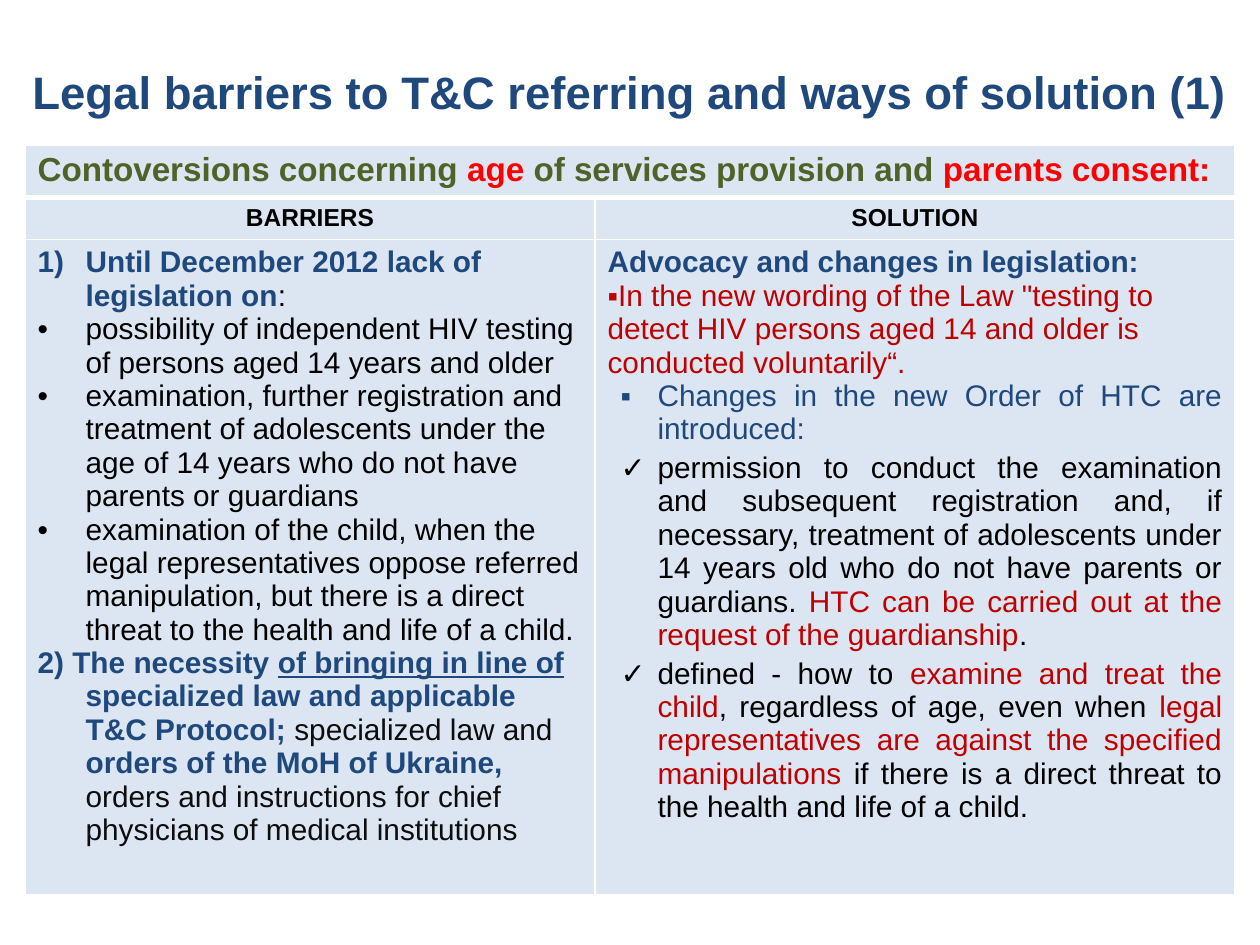
from lxml import etree
from pptx import Presentation
from pptx.dml.color import RGBColor
from pptx.enum.text import MSO_ANCHOR, PP_ALIGN
from pptx.oxml.ns import qn
from pptx.util import Pt

PX = 914400 // 126
LEFT, CENTER, JUSTIFY = PP_ALIGN.LEFT, PP_ALIGN.CENTER, PP_ALIGN.JUSTIFY
MIDDLE = MSO_ANCHOR.MIDDLE
NAVY, OLIVE, RED, CRIMSON = "1F497D", "4F6228", "FF0000", "C00000"
BLACK, SOFT_BLACK, WHITE, PALE = "000000", "0D0D0D", "FFFFFF", "DCE6F2"

COLUMNS = (570, 640)
ROWS = (48, 41, 646)
HANGING = {"margin": 48, "indent": -48}
NESTED = {"margin": 50, "indent": -37, "align": JUSTIFY, "after": 3}
BOLD = {"bold": True}
UNDERLINED = {"bold": True, "underline": True}

# A paragraph is (layout, spans); a span is (text, colour, font values).
TITLE = [({"align": CENTER, "before": 5},
          [("Legal barriers to T&C referring and ways of solution (1)", NAVY, BOLD)])]
TOPIC = [({}, [
    ("Contoversions concerning ", OLIVE, BOLD),
    ("age", RED, BOLD),
    (" of services provision and ", OLIVE, BOLD),
    ("parents consent:", RED, BOLD),
])]
BARRIERS_HEAD = [({"align": CENTER}, [("BARRIERS", BLACK, BOLD)])]
SOLUTION_HEAD = [({"align": CENTER}, [("SOLUTION", BLACK, BOLD)])]
BARRIERS = [
    ({**HANGING, "number": "arabicParenR"}, [
        ("Until December 2012 lack of legislation on", NAVY, BOLD),
        (":", BLACK, {}),
    ]),
    *(({**HANGING, "bullet": "•"}, [(text, BLACK, {})]) for text in (
        "possibility of independent HIV testing of persons aged 14 years and older",
        "examination, further registration and treatment of adolescents under the "
        "age of 14 years who do not have parents or guardians",
        "examination of the child, when the legal representatives oppose referred "
        "manipulation, but there is a direct threat to the health and life of a child.",
    )),
    (HANGING, [
        ("2) The necessity ", NAVY, BOLD),
        ("of bringing in line of ", NAVY, UNDERLINED),
        ("specialized law and applicable T&C Protocol; ", NAVY, BOLD),
        ("specialized law and ", SOFT_BLACK, {}),
        ("orders of the MoH of Ukraine, ", NAVY, BOLD),
        ("orders and instructions for chief physicians of medical institutions",
         SOFT_BLACK, {}),
    ]),
]
SOLUTION = [
    ({}, [("Advocacy and changes in legislation:", NAVY, BOLD)]),
    ({"bullet": "▪"}, [
        ('In the new wording of the Law "testing to detect HIV persons aged 14 '
         "and older is conducted voluntarily“.", CRIMSON, {}),
    ]),
    ({**NESTED, "bullet": "▪"}, [
        ("Changes in the new Order of HTC are introduced:", NAVY, {}),
    ]),
    ({**NESTED, "bullet": "✓"}, [
        ("permission to conduct the examination and subsequent registration and, if "
         "necessary, treatment of adolescents under 14 years old who do not have "
         "parents or guardians. ", BLACK, {}),
        ("HTC can be carried out at the request of the guardianship", CRIMSON, {}),
        (".", BLACK, {}),
    ]),
    ({**NESTED, "bullet": "✓"}, [
        ("defined - how to ", BLACK, {}),
        ("examine and treat the child", CRIMSON, {}),
        (", regardless of age, even when ", BLACK, {}),
        ("legal representatives are against the specified manipulations", CRIMSON, {}),
        (" if there is a direct threat to the health and life of a child.", BLACK, {}),
    ]),
]


def px(length):
    return length * PX


def color(value):
    return RGBColor.from_string(value)


def set_layout(para, layout):
    """Apply alignment, spacing, indents and the list mark of a paragraph."""
    para.alignment = layout.get("align", LEFT)
    para.space_before = Pt(layout.get("before", 0))
    para.space_after = Pt(layout.get("after", 0))
    props = para._p.get_or_add_pPr()
    props.set("marL", str(px(layout.get("margin", 0))))
    props.set("indent", str(px(layout.get("indent", 0))))
    if "bullet" in layout:
        etree.SubElement(props, qn("a:buFont"), typeface="Arial")
        etree.SubElement(props, qn("a:buChar"), char=layout["bullet"])
    elif "number" in layout:
        etree.SubElement(props, qn("a:buAutoNum"), type=layout["number"])
    else:
        etree.SubElement(props, qn("a:buNone"))


def write_text(frame, paragraphs, size):
    frame.word_wrap = True
    for index, (layout, spans) in enumerate(paragraphs):
        para = frame.add_paragraph() if index else frame.paragraphs[0]
        set_layout(para, layout)
        for text, shade, values in spans:
            span = para.add_run()
            span.text = text
            span.font.color.rgb = color(shade)
            font_values = {"name": "Arial", "size": Pt(size), "bold": False, **values}
            for name, value in font_values.items():
                setattr(span.font, name, value)


def add_title(page):
    box = page.shapes.add_textbox(px(15), px(38), px(1230), px(107))
    box.text_frame.vertical_anchor = MIDDLE
    write_text(box.text_frame, TITLE, 26)


def set_borders(cell, widths):
    """Draw white cell borders; widths maps L, R, T and B to points."""
    props = cell._tc.get_or_add_tcPr()
    for index, (side, width) in enumerate(widths.items()):
        line = etree.Element(qn(f"a:ln{side}"), w=str(Pt(width)))
        fill = etree.SubElement(line, qn("a:solidFill"))
        etree.SubElement(fill, qn("a:srgbClr"), val=WHITE)
        props.insert(index, line)


def add_comparison(page):
    frame = page.shapes.add_table(len(ROWS), len(COLUMNS), px(25), px(145),
                                  px(sum(COLUMNS)), px(sum(ROWS)))
    table = frame.table
    table.first_row = table.horz_banding = False
    for column, width in zip(table.columns, COLUMNS):
        column.width = px(width)
    for row, height in zip(table.rows, ROWS):
        row.height = px(height)
    for index, row in enumerate(table.rows):
        for cell in row.cells:
            cell.fill.solid()
            cell.fill.fore_color.rgb = color(PALE)
            set_borders(cell, {"L": 1, "R": 1, "T": 3 if index == 1 else 1,
                               "B": 3 if index == 0 else 1})
    table.cell(0, 0).merge(table.cell(0, 1))
    contents = (
        (0, 0, TOPIC, 19),
        (1, 0, BARRIERS_HEAD, 14), (1, 1, SOLUTION_HEAD, 14),
        (2, 0, BARRIERS, 17), (2, 1, SOLUTION, 17),
    )
    for row, column, paragraphs, size in contents:
        write_text(table.cell(row, column).text_frame, paragraphs, size)


def main():
    deck = Presentation()
    deck.slide_width, deck.slide_height = px(1260), px(945)
    page = deck.slides.add_slide(deck.slide_layouts[6])
    add_title(page)
    add_comparison(page)
    deck.save("out.pptx")


if __name__ == "__main__":
    main()
